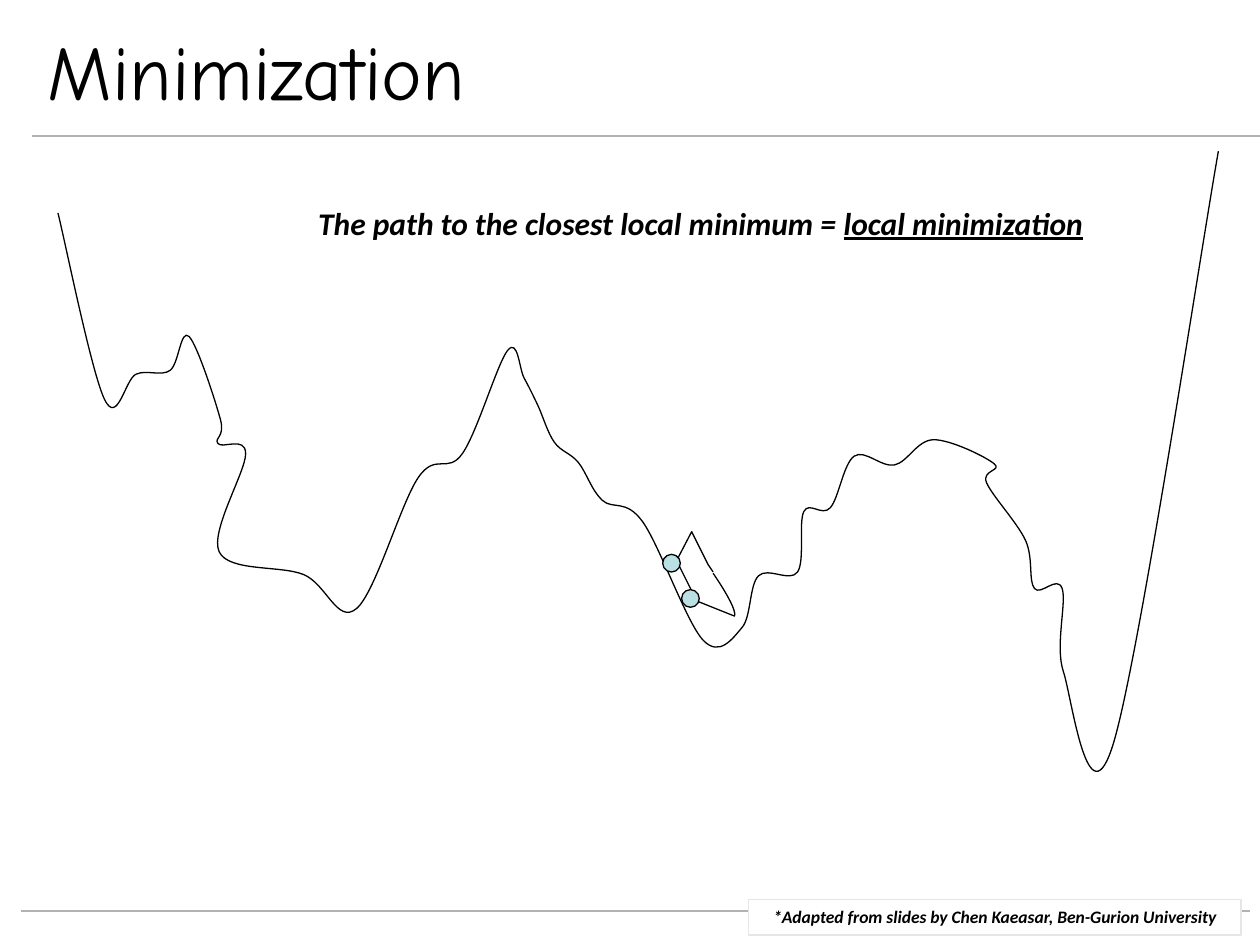
from lxml import etree
from pptx import Presentation
from pptx import util as u
from pptx.dml.color import RGBColor
from pptx.enum import shapes, text
from pptx.oxml.ns import qn

# Turning points of the energy curve, in inches
LANDSCAPE = [
    (0.46, 1.69), (0.83, 3.17), (1.08, 2.97), (1.35, 2.94), (1.5, 2.67),
    (1.75, 3.33), (1.73, 3.52), (1.95, 3.6), (1.74, 4.38), (2.41, 4.56),
    (2.83, 4.83), (3.32, 3.79), (3.67, 3.6), (4.03, 2.78), (4.16, 3),
    (4.27, 3.22), (4.4, 3.51), (4.59, 3.67), (4.78, 3.97), (5.1, 4.14),
    (5.58, 5.08), (5.89, 4.98), (6.02, 4.57), (6.33, 4.54), (6.38, 4.06),
    (6.59, 4.03), (6.78, 3.62), (7.1, 3.69), (7.41, 3.49), (7.89, 3.68),
    (7.83, 3.83), (8.14, 4.29), (8.21, 4.67), (8.43, 4.67), (8.44, 5.33),
    (8.84, 5.89), (9.67, 1.2),
]

# Each segment is one point (straight) or two controls and a point (curve)
STEP_START = (5.66, 4.55)
STEP = [[(5.75, 4.68), (5.85, 4.85), (5.83, 4.89)]] + [
    [pt] for pt in [(5.53, 4.77), (5.37, 4.45), (5.49, 4.22), (5.62, 4.48), (5.66, 4.54)]]


def color(value):
    return RGBColor.from_string(value)


def spline(pts):
    """Smooth segments: each tangent is a sixth of the neighbours' distance."""
    padded = [pts[0], *pts, pts[-1]]
    segments = []
    for before, a, b, after in zip(padded, padded[1:], padded[2:], padded[3:]):
        c1 = tuple(a[i] + (b[i] - before[i]) / 6 for i in (0, 1))
        c2 = tuple(b[i] - (after[i] - a[i]) / 6 for i in (0, 1))
        segments.append([c1, c2, b])
    return segments


class Deck:
    INK, RULE, BALL, PAPER, EDGE = "000000", "B2B2B2", "BBE0E3", "FFFFFF", "E6E6E6"
    NOTE = {"name": "Calibri", "bold": True, "italic": True}
    TITLE = {"name": "Comic Neue", "size": u.Pt(44)}

    def __init__(self, width, height):
        self.prs = Presentation()
        self.prs.slide_width, self.prs.slide_height = u.Inches(width), u.Inches(height)
        self.s = self.prs.slides.add_slide(self.prs.slide_layouts[6])

    def rule(self, x1, x2, y):
        sp = self.s.shapes.add_connector(
            shapes.MSO_CONNECTOR.STRAIGHT, *map(u.Inches, (x1, y, x2, y)))
        sp.line.color.rgb = color(self.RULE)
        sp.line.width = u.Pt(1.5)
        etree.SubElement(sp._element.spPr, qn("a:effectLst"))

    def outline(self, sp, fill=None, line=INK):
        sp.shadow.inherit = False
        if fill:
            sp.fill.solid()
            sp.fill.fore_color.rgb = color(fill)
        else:
            sp.fill.background()
        sp.line.color.rgb = color(line)
        sp.line.width = u.Pt(0.75)

    def curve(self, start, segments):
        builder = self.s.shapes.build_freeform(*map(u.Inches, start))
        builder.add_line_segments(
            [tuple(map(u.Inches, seg[-1])) for seg in segments], close=False)
        sp = builder.convert_to_shape()
        # Turn line segments into cubic curves where controls are given
        for el, seg in zip(list(sp._element.iter(qn("a:lnTo"))), segments):
            if len(seg) == 3:
                bezier = etree.Element(qn("a:cubicBezTo"))
                for x, y in seg:
                    etree.SubElement(bezier, qn("a:pt"), x=str(u.Inches(x) - sp.left),
                                     y=str(u.Inches(y) - sp.top))
                el.getparent().replace(el, bezier)
        self.outline(sp)

    def shape(self, kind, box, fill, line=INK):
        sp = self.s.shapes.add_shape(kind, *map(u.Inches, box))
        self.outline(sp, fill, line)
        return sp

    def label(self, sp, runs, style, wrap=True, align=text.PP_ALIGN.CENTER,
              anchor=text.MSO_ANCHOR.TOP):
        tf = sp.text_frame
        tf.word_wrap, tf.vertical_anchor = wrap, anchor
        p = tf.paragraphs[0]
        p.alignment = align
        for words, extra in runs:
            r = p.add_run()
            r.text = words
            r.font.color.rgb = color(self.INK)
            for key, value in {**style, **extra}.items():
                setattr(r.font, key, value)

    def textbox(self, box, runs, style, **layout):
        sp = self.s.shapes.add_textbox(*map(u.Inches, box))
        self.label(sp, runs, style, **layout)


def main():
    deck = Deck(10, 7.5)

    # Header and footer rules
    deck.rule(0.25, 10, 1.08)
    deck.rule(0.17, 9.92, 7.23)

    # Energy landscape
    deck.curve(LANDSCAPE[0], spline(LANDSCAPE))

    # Step from one position to the next
    deck.curve(STEP_START, STEP)
    for x, y in [(5.41, 4.68), (5.26, 4.4)]:
        deck.shape(shapes.MSO_SHAPE.OVAL, (x, y, 0.14, 0.14), deck.BALL)

    # Credit
    credit = deck.shape(shapes.MSO_SHAPE.RECTANGLE, (5.94, 7.14, 3.91, 0.28),
                        deck.PAPER, deck.EDGE)
    deck.label(credit, [("*Adapted from slides by Chen Kaeasar, Ben-Gurion University", {})],
               {**deck.NOTE, "size": u.Pt(10)})

    # Caption and title
    deck.textbox((2.4, 1.57, 6.32, 0.4),
                 [("The path to the closest local minimum = ", {}),
                  ("local minimization ", {"underline": True})],
                 {**deck.NOTE, "size": u.Pt(18)}, wrap=False)
    deck.textbox((0.28, 0.21, 9, 0.68), [("Minimization", {})], deck.TITLE,
                 align=text.PP_ALIGN.LEFT, anchor=text.MSO_ANCHOR.MIDDLE)

    deck.prs.save("out.pptx")


if __name__ == "__main__":
    main()
